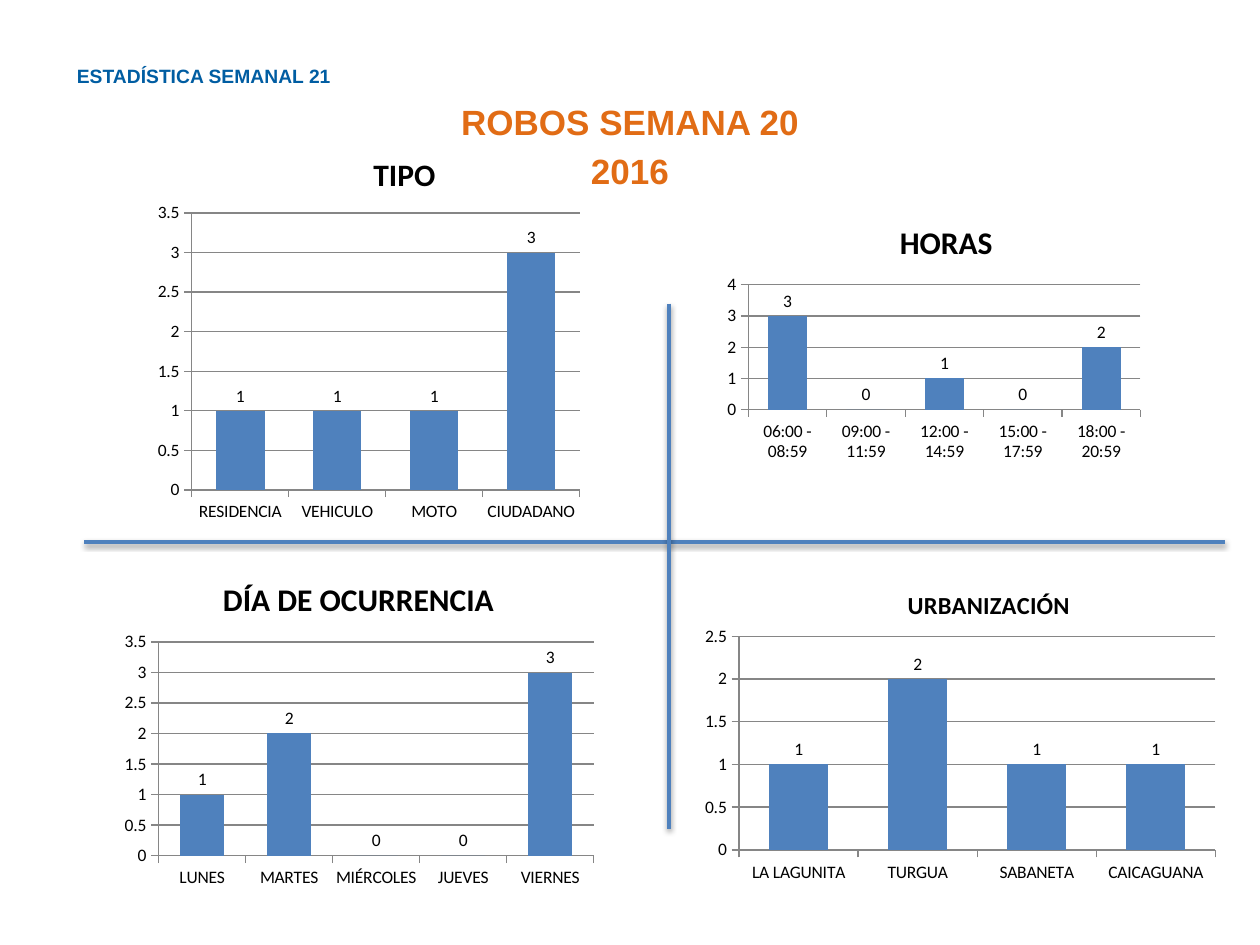
import pptx
import pptx.util
import pptx.chart.data
import pptx.dml.color
import pptx.enum.chart
import pptx.enum.shapes
import pptx.enum.text
import pptx.oxml
import pptx.oxml.ns

Inches, Pt = pptx.util.Inches, pptx.util.Pt
XL = pptx.enum.chart
ALIGN = pptx.enum.text.PP_ALIGN
ANCHOR = pptx.enum.text.MSO_ANCHOR
COLORS = {"blue": "4F81BD", "heading": "005DA2", "orange": "E16C15",
          "grid": "868686", "text": "000000"}

# Content: boxes are left, top, width, height in inches
HEADING = "ESTADÍSTICA SEMANAL 21"
SUBTITLE = ["ROBOS SEMANA 20", "2016"]
HEADING_FONT = {"name": "Arial", "size": Pt(11), "bold": True}
SUBTITLE_FONT = {"name": "Arial", "size": Pt(20), "bold": True}
CHART_FONT = {"name": "Calibri", "size": Pt(10), "bold": False}
DIVIDERS = [(0.67, 4.3, 9.72, 4.3), (5.31, 2.41, 5.31, 6.58)]

# title_at and plot are fractions of the chart box; None is a blank, drawn as 0
CHARTS = [
    {"title": "TIPO", "size": 18, "box": (1.2, 1.05, 3.58, 3.09),
     "title_at": (0.48, 0.04), "plot": (0.09, 0.21, 0.86, 0.72),
     "max": 3.5, "unit": 0.5,
     "data": {"RESIDENCIA": 1, "VEHICULO": 1, "MOTO": 1, "CIUDADANO": 3}},
    {"title": "HORAS", "size": 18, "box": (5.5, 1.6, 3.99, 2.54),
     "title_at": (0.4, 0.04), "plot": (0.11, 0.26, 0.78, 0.39),
     "max": 4, "unit": 1,
     "data": {"06:00 - 08:59": 3, "09:00 - 11:59": None, "12:00 - 14:59": 1,
              "15:00 - 17:59": None, "18:00 - 20:59": 2}},
    {"title": "URBANIZACIÓN", "size": 14, "box": (5.53, 4.45, 4.2, 2.61),
     "title_at": (0.39, 0.07), "plot": (0.08, 0.23, 0.9, 0.65),
     "max": 2.5, "unit": 0.5,
     "data": {"LA LAGUNITA": 1, "TURGUA": 2, "SABANETA": 1, "CAICAGUANA": 1}},
    {"title": "DÍA DE OCURRENCIA", "size": 18, "box": (0.91, 4.46, 3.88, 2.65),
     "title_at": (0.21, 0.03), "plot": (0.09, 0.24, 0.89, 0.64),
     "max": 3.5, "unit": 0.5,
     "data": {"LUNES": 1, "MARTES": 2, "MIÉRCOLES": None, "JUEVES": None,
              "VIERNES": 3}},
]


def rgb(name):
    return pptx.dml.color.RGBColor.from_string(COLORS[name])


def set_attrs(obj, values):
    for key, value in values.items():
        setattr(obj, key, value)


def set_font(font, values, color):
    set_attrs(font, values)
    font.color.rgb = rgb(color)


def fill_placeholder(sp, box, lines, font, color, align, anchor):
    set_attrs(sp, dict(zip(("left", "top", "width", "height"),
                           map(Inches, box))))
    tf = sp.text_frame
    set_attrs(tf, {"word_wrap": True, "vertical_anchor": anchor})
    for i, line in enumerate(lines):
        p = tf.paragraphs[0] if i == 0 else tf.add_paragraph()
        set_attrs(p, {"alignment": align, "space_before": Pt(4 if i else 0)})
        r = p.add_run()
        r.text = line
        set_font(r.font, font, color)


def add_divider(slide, ends):
    line = slide.shapes.add_connector(
        pptx.enum.shapes.MSO_CONNECTOR.STRAIGHT, *map(Inches, ends))
    line.line.color.rgb = rgb("blue")
    line.line.width = Pt(2)
    line._element.spPr.append(pptx.oxml.parse_xml(
        f'<a:effectLst {pptx.oxml.ns.nsdecls("a")}>'
        f'<a:outerShdw blurRad="{Pt(3.1)}" dist="{Pt(1.6)}" dir="5400000" '
        'rotWithShape="0"><a:srgbClr val="000000"><a:alpha val="38000"/>'
        '</a:srgbClr></a:outerShdw></a:effectLst>'))


def layout_xml(fractions, inner=False):
    keys = ("x", "y", "w", "h")
    target = '<c:layoutTarget val="inner"/>' if inner else ""
    modes = "".join(f'<c:{k}Mode val="edge"/>' for k in keys[:2])
    values = "".join(f'<c:{k} val="{v}"/>' for k, v in zip(keys, fractions))
    return pptx.oxml.parse_xml(
        f'<c:layout {pptx.oxml.ns.nsdecls("c")}><c:manualLayout>'
        f'{target}{modes}{values}</c:manualLayout></c:layout>')


def place(parent, layout, index):
    for old in parent.findall(pptx.oxml.ns.qn("c:layout")):
        parent.remove(old)
    parent.insert(index, layout)


def add_column_chart(slide, item):
    data = pptx.chart.data.CategoryChartData()
    data.categories = list(item["data"])
    data.add_series("Series 1", list(item["data"].values()))
    chart = slide.shapes.add_chart(
        XL.XL_CHART_TYPE.COLUMN_CLUSTERED, *map(Inches, item["box"]),
        data).chart
    chart.has_legend = False
    set_font(chart.font, CHART_FONT, "text")

    # Title and plot area
    tf = chart.chart_title.text_frame
    tf.text = item["title"]
    set_font(tf.paragraphs[0].runs[0].font,
             {"name": "Calibri", "size": Pt(item["size"]), "bold": True},
             "text")
    place(chart.chart_title._element, layout_xml(item["title_at"]), 1)
    place(chart._chartSpace.chart.plotArea,
          layout_xml(item["plot"], inner=True), 0)

    # Blanks count as zero
    for blanks in chart._chartSpace.iter(pptx.oxml.ns.qn("c:dispBlanksAs")):
        blanks.set("val", "zero")

    # Axes
    for axis in (chart.category_axis, chart.value_axis):
        axis.major_tick_mark = XL.XL_TICK_MARK.OUTSIDE
        axis.format.line.color.rgb = rgb("grid")
    axis = chart.value_axis
    set_attrs(axis, {"minimum_scale": 0, "maximum_scale": item["max"],
                     "major_unit": item["unit"], "has_major_gridlines": True})
    axis.major_gridlines.format.line.color.rgb = rgb("grid")

    # Columns and labels
    plot = chart.plots[0]
    set_attrs(plot, {"gap_width": 100, "vary_by_categories": False,
                     "has_data_labels": True})
    set_attrs(plot.data_labels,
              {"show_value": True,
               "position": XL.XL_LABEL_POSITION.OUTSIDE_END})
    fill = plot.series[0].format.fill
    fill.solid()
    fill.fore_color.rgb = rgb("blue")


def main():
    prs = pptx.Presentation()
    prs.slide_width, prs.slide_height = Inches(10), Inches(7.5)
    slide = prs.slides.add_slide(prs.slide_layouts[0])
    fill_placeholder(slide.placeholders[1], (0.51, 0.75, 8.98, 0.79),
                     SUBTITLE, SUBTITLE_FONT, "orange", ALIGN.CENTER,
                     ANCHOR.TOP)
    fill_placeholder(slide.shapes.title, (0.51, 0.46, 5.28, 0.29),
                     [HEADING], HEADING_FONT, "heading", ALIGN.LEFT,
                     ANCHOR.MIDDLE)
    for ends in DIVIDERS:
        add_divider(slide, ends)
    for item in CHARTS:
        add_column_chart(slide, item)
    prs.save("out.pptx")


if __name__ == "__main__":
    main()
